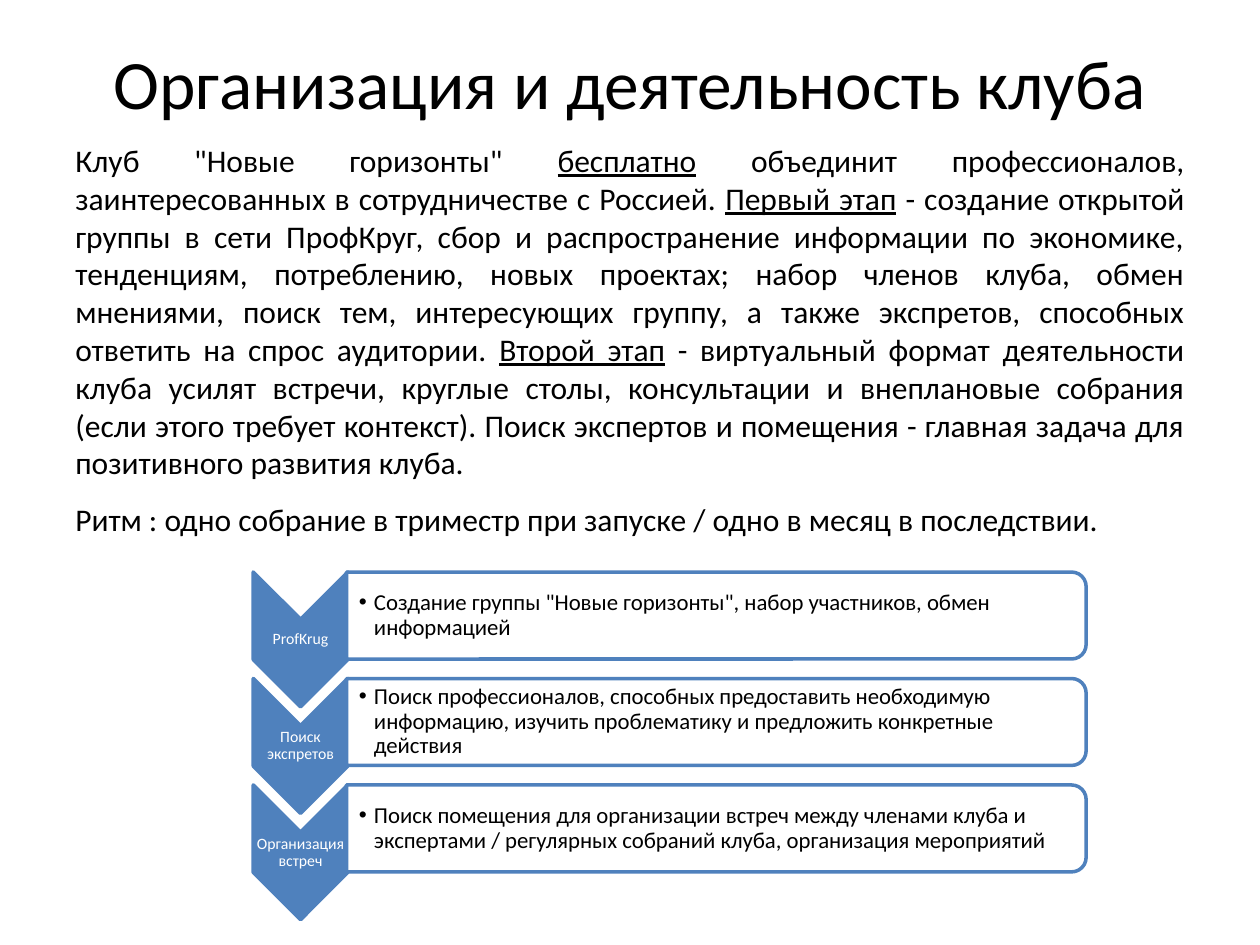
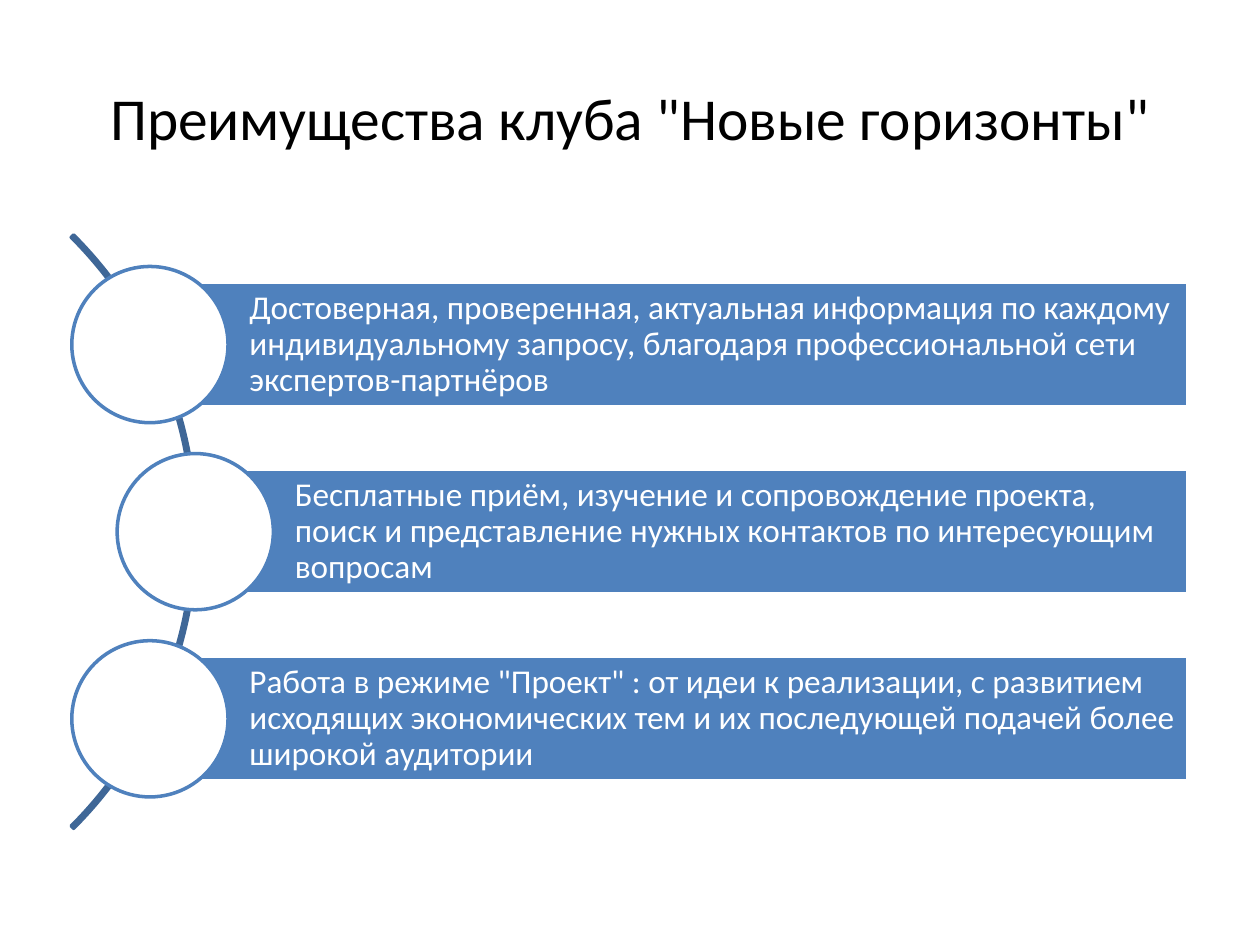
from dataclasses import dataclass

from lxml import etree
from pptx import Presentation
from pptx import util as u
from pptx.dml.color import RGBColor
from pptx.enum import shapes, text
from pptx.oxml import ns

PRESET = shapes.MSO_SHAPE
ALIGN = text.PP_ALIGN
ANCHOR = text.MSO_ANCHOR


@dataclass(frozen=True)
class Theme:
    font: str = "Calibri"
    ink: str = "000000"
    paper: str = "FFFFFF"
    accent: str = "4F81BD"
    arc: str = "3F6797"
    line: float = 2
    activity_title: float = 39.6
    benefits_title: float = 34
    body: float = 18
    label: float = 9
    detail: float = 13
    benefit: float = 19


THEME = Theme()

# The slide is a grid of 100 columns by 75 rows
CELL = u.Inches(10) // 100

INTRO = [
    ('Клуб "Новые горизонты" ', False),
    ("бесплатно", True),
    (" объединит профессионалов, заинтересованных в сотрудничестве с Россией. ", False),
    ("Первый этап", True),
    (" - создание открытой группы в сети ПрофКруг, сбор и распространение информации "
     "по экономике, тенденциям, потреблению, новых проектах; набор членов клуба, обмен "
     "мнениями, поиск тем, интересующих группу, а также экспретов, способных ответить "
     "на спрос аудитории. ", False),
    ("Второй этап", True),
    (" - виртуальный формат деятельности клуба усилят встречи, круглые столы, "
     "консультации и внеплановые собрания (если этого требует контекст). Поиск экспертов "
     "и помещения - главная задача для позитивного развития клуба.", False),
]
RHYTHM = [("Ритм : одно собрание в триместр при запуске / одно в месяц в последствии.", False)]

STAGES = [
    ("ProfKrug",
     'Создание группы "Новые горизонты", набор участников, обмен информацией'),
    ("Поиск экспретов",
     "Поиск профессионалов, способных предоставить необходимую информацию, изучить "
     "проблематику и предложить конкретные действия"),
    ("Организация встреч",
     "Поиск помещения для организации встреч между членами клуба и экспертами / "
     "регулярных собраний клуба, организация мероприятий"),
]

BENEFITS = [
    "Достоверная, проверенная, актуальная информация по каждому индивидуальному запросу, "
    "благодаря профессиональной сети экспертов-партнёров",
    "Бесплатные приём, изучение и сопровождение проекта, поиск и представление нужных "
    "контактов по интересующим вопросам",
    'Работа в режиме "Проект" : от идеи к реализации, с развитием исходящих экономических '
    "тем и их последующей подачей более широкой аудитории",
]


def cells(*counts):
    return [round(count * CELL) for count in counts]


def apply(target, values):
    for name, value in values.items():
        setattr(target, name, value)


def write(frame, paragraphs, size, color, insets=(1, 0.5, 1, 0.5),
          anchor=ANCHOR.MIDDLE, **paragraph_format):
    """Fill a text frame; each paragraph is a list of (words, underlined)."""
    sides = ("margin_left", "margin_top", "margin_right", "margin_bottom")
    apply(frame, dict(zip(sides, cells(*insets)), word_wrap=True, vertical_anchor=anchor))
    for index, runs in enumerate(paragraphs):
        paragraph = frame.add_paragraph() if index else frame.paragraphs[0]
        apply(paragraph, paragraph_format)
        for words, underlined in runs:
            run = paragraph.add_run()
            run.text = words
            apply(run.font, {"name": THEME.font, "size": u.Pt(size), "underline": underlined})
            run.font.color.rgb = RGBColor.from_string(color)
    return frame


def text_area(slide, box, paragraphs, size, color=THEME.ink, **options):
    area = slide.shapes.add_textbox(*cells(*box))
    return write(area.text_frame, paragraphs, size, color, **options)


def title(slide, words, height, size):
    text_area(slide, (5, 3, 90, height), [[(words, False)]], size, alignment=ALIGN.CENTER)


def figure(slide, preset, box, fill, line, quarter_turn=False):
    """Draw a preset shape so that it covers box, even when turned by 90 degrees."""
    left, top, width, height = box
    if quarter_turn:
        shift = (width - height) / 2
        left, top, width, height = left + shift, top - shift, height, width
    shape = slide.shapes.add_shape(preset, *cells(left, top, width, height))
    shape.rotation = 90 if quarter_turn else 0
    shape.shadow.inherit = False
    if fill:
        shape.fill.solid()
        shape.fill.fore_color.rgb = RGBColor.from_string(fill)
    else:
        shape.fill.background()
    shape.line.color.rgb = RGBColor.from_string(line)
    shape.line.width = u.Pt(THEME.line)
    return shape


def add_bullet(paragraph, indent):
    properties = paragraph._p.get_or_add_pPr()
    width = cells(indent)[0]
    properties.set("marL", str(width))
    properties.set("indent", str(-width))
    etree.SubElement(properties, ns.qn("a:buFont"), typeface="Arial")
    etree.SubElement(properties, ns.qn("a:buChar"), char="•")


def stage(slide, top, name, detail):
    """One step: a downward chevron with its name and a rounded panel of detail."""
    figure(slide, PRESET.CHEVRON, (20.1, top, 7.5, 10.7),
           THEME.accent, THEME.accent, quarter_turn=True)
    text_area(slide, (20.1, top + 3.75, 7.5, 3.2), [[(name, False)]], THEME.label,
              THEME.paper, insets=(0.1,) * 4, alignment=ALIGN.CENTER, line_spacing=0.9)
    figure(slide, PRESET.ROUND_2_SAME_RECTANGLE, (27.5, top, 58.7, 6.9),
           THEME.paper, THEME.accent, quarter_turn=True)
    panel = text_area(slide, (27.5, top + 0.3, 58.3, 6.3), [[(detail, False)]],
                      THEME.detail, insets=(1, 0.1, 0.1, 0.1), line_spacing=0.9)
    add_bullet(panel.paragraphs[0], 1.2)


def benefit(slide, center, left, words):
    """One bar running to the right margin, with a circle over its left end."""
    height, circle = 9.9, 12.4
    bar = figure(slide, PRESET.RECTANGLE, (left, center - height / 2, 94.3 - left, height),
                 THEME.accent, THEME.paper)
    write(bar.text_frame, [[(words, False)]], THEME.benefit, THEME.paper,
          insets=(7.9, 0.5, 0.5, 0.5), alignment=ALIGN.LEFT, line_spacing=0.9)
    figure(slide, PRESET.OVAL, (left - circle / 2, center - circle / 2, circle, circle),
           THEME.paper, THEME.accent)


def activity_slide(slide):
    title(slide, "Организация и деятельность клуба", 6.9, THEME.activity_title)
    body = text_area(slide, (5, 10.7, 90, 34), [INTRO, RHYTHM], THEME.body,
                     anchor=ANCHOR.TOP, alignment=ALIGN.JUSTIFY)
    body.paragraphs[1].space_before = u.Pt(10.5)
    for row, (name, detail) in enumerate(STAGES):
        stage(slide, 45.4 + 8.45 * row, name, detail)


def benefits_slide(slide):
    title(slide, 'Преимущества клуба "Новые горизонты"', 12.5, THEME.benefits_title)
    # Thin arc from -45 to 45 degrees behind the circles
    arc = figure(slide, PRESET.BLOCK_ARC, (-51, 8.9, 66.6, 66.6), None, THEME.arc)
    for index, value in enumerate((189, 27, 0.004)):
        arc.adjustments[index] = value
    for row, words in enumerate(BENEFITS):
        benefit(slide, 27.35 + 14.85 * row, 15.5 if row == 1 else 11.9, words)


def main():
    deck = Presentation()
    apply(deck, {"slide_width": 100 * CELL, "slide_height": 75 * CELL})
    blank = deck.slide_layouts[6]
    for build in (activity_slide, benefits_slide):
        build(deck.slides.add_slide(blank))
    deck.save("out.pptx")


if __name__ == "__main__":
    main()
